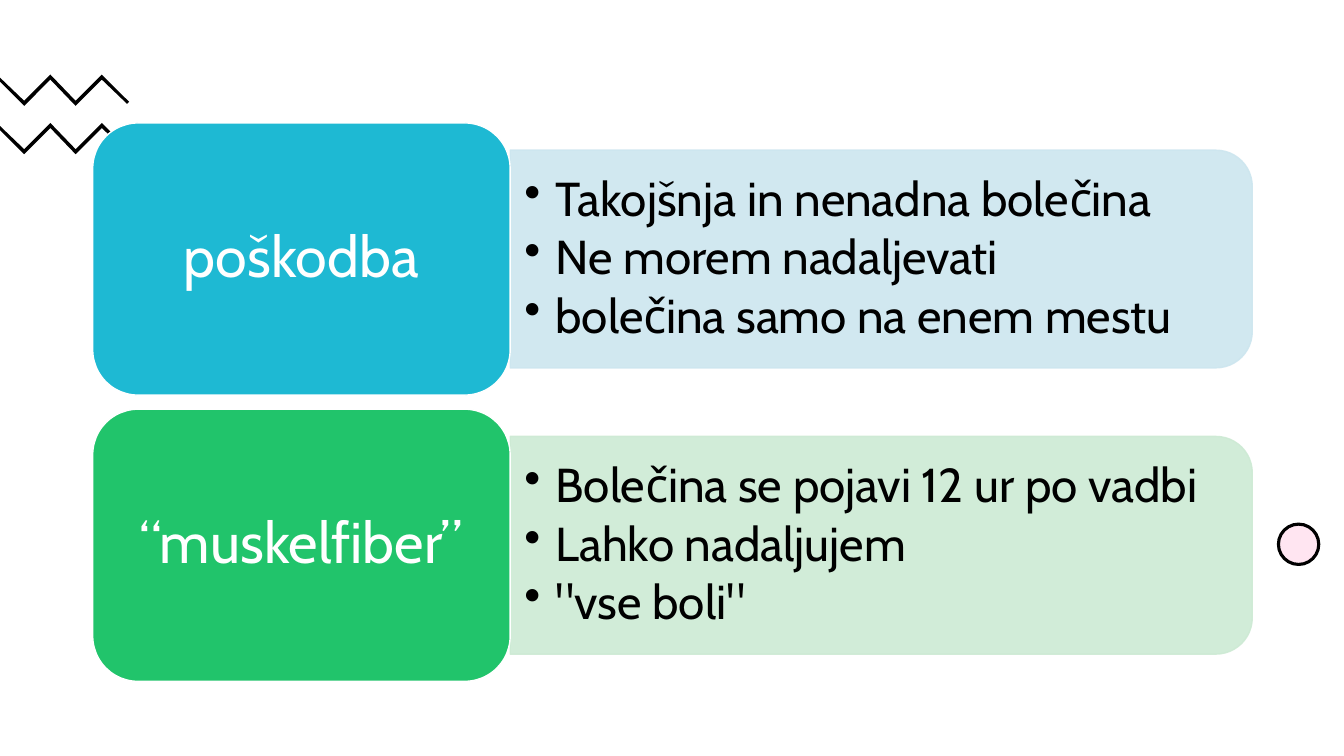
from lxml.etree import SubElement
from pptx import Presentation
from pptx.dml.color import RGBColor
from pptx.enum.shapes import MSO_SHAPE
from pptx.enum.text import MSO_ANCHOR, PP_ALIGN
from pptx.oxml.ns import qn
from pptx.util import Pt

PX = 9144  # EMU per px, 100 px to the inch
FONT = "Cabin"

BLACK = RGBColor(0x00, 0x00, 0x00)
WHITE = RGBColor(0xFF, 0xFF, 0xFF)
PINK = RGBColor(0xFF, 0x80, 0xBD)
BLUE = RGBColor(0x1E, 0xB9, 0xD3)
PALE_BLUE = RGBColor(0xCD, 0xE6, 0xEF)
GREEN = RGBColor(0x21, 0xC4, 0x6B)
PALE_GREEN = RGBColor(0xCD, 0xEA, 0xD4)

ZIGZAG = [(50, 0), (75, 26), (101, 0), (128, 27), (126, 29), (101, 5),
          (75, 31), (50, 5), (24, 31), (0, 7), (0, 3), (24, 26)]
ZIGZAG_TOPS = (74, 122)

FIRST_ROW_TOP, ROW_PITCH = 122, 284
CARD_LEFT, CARD_WIDTH, CARD_HEIGHT = 92, 414, 270
PANEL_WIDTH, PANEL_HEIGHT = 736, 216
POINTS_WIDTH, POINTS_HEIGHT = 725, 195

ROWS = [
    ("poškodba", BLUE, PALE_BLUE,
     ["Takojšnja in nenadna bolečina", "Ne morem nadaljevati",
      "bolečina samo na enem mestu"]),
    ("“muskelfiber”", GREEN, PALE_GREEN,
     ["Bolečina se pojavi 12 ur po vadbi", "Lahko nadaljujem",
      '"vse boli"']),
]


class SlideBuilder:
    def __init__(self, slide):
        self.slide = slide

    def paint(self, shape, fill, line=None, weight=1, opacity=100):
        """Set fill and line; opacity in percent applies to the fill colour."""
        shape.shadow.inherit = False
        shape.fill.solid()
        shape.fill.fore_color.rgb = fill
        if line is None:
            shape.line.fill.background()
        else:
            shape.line.color.rgb = line
            shape.line.width = Pt(weight)
        if opacity < 100:
            for colour in shape._element.spPr.iter(qn("a:srgbClr")):
                if colour.get("val") == str(fill):
                    SubElement(colour, qn("a:alpha"), val=str(opacity * 1000))

    def shape(self, kind, left, top, width, height, **paint):
        box = (value * PX for value in (left, top, width, height))
        shape = self.slide.shapes.add_shape(kind, *box)
        self.paint(shape, **paint)
        return shape

    def zigzag(self, top):
        start, *rest = [(x, top + y) for x, y in ZIGZAG]
        outline = self.slide.shapes.build_freeform(*start, scale=PX)
        outline.add_line_segments(rest, close=True)
        self.paint(outline.convert_to_shape(), BLACK)

    def panel(self, left, middle, colour):
        """Draw a panel turned so that its rounded corners face right."""
        panel = self.shape(
            MSO_SHAPE.ROUND_2_SAME_RECTANGLE,
            left + (PANEL_WIDTH - PANEL_HEIGHT) // 2, middle - PANEL_WIDTH // 2,
            PANEL_HEIGHT, PANEL_WIDTH, fill=colour, line=colour, opacity=90)
        panel.rotation = 90

    def set_text(self, frame, lines, size, colour, align, inset_x, inset_y, after=0):
        frame_format = {
            "word_wrap": True, "vertical_anchor": MSO_ANCHOR.MIDDLE,
            "margin_left": inset_x * PX, "margin_right": inset_x * PX,
            "margin_top": inset_y * PX, "margin_bottom": inset_y * PX}
        for name, value in frame_format.items():
            setattr(frame, name, value)
        frame.text = "\n".join(lines)
        paragraph_format = {"alignment": align, "line_spacing": 0.9,
                            "space_after": Pt(after)}
        for paragraph in frame.paragraphs:
            for name, value in paragraph_format.items():
                setattr(paragraph, name, value)
            font = paragraph.runs[0].font
            font.name, font.size, font.color.rgb = FONT, Pt(size), colour

    def card(self, top, label, colour):
        card = self.shape(MSO_SHAPE.ROUNDED_RECTANGLE, CARD_LEFT, top,
                          CARD_WIDTH, CARD_HEIGHT, fill=colour, line=WHITE)
        self.set_text(card.text_frame, [label], 41, WHITE, PP_ALIGN.CENTER, 17, 9)

    def bullets(self, left, middle, points):
        box = self.slide.shapes.add_textbox(
            left * PX, (middle - POINTS_HEIGHT // 2) * PX,
            POINTS_WIDTH * PX, POINTS_HEIGHT * PX)
        self.set_text(box.text_frame, points, 34, BLACK, PP_ALIGN.LEFT, 14, 7, after=5)
        for paragraph in box.text_frame.paragraphs:
            properties = paragraph._p.get_or_add_pPr()
            properties.set("marL", str(31 * PX))
            properties.set("indent", str(-31 * PX))
            SubElement(properties, qn("a:buChar"), char="•")


def main():
    deck = Presentation()
    deck.slide_width, deck.slide_height = 1333 * PX, 750 * PX
    builder = SlideBuilder(deck.slides.add_slide(deck.slide_layouts[6]))

    for top in ZIGZAG_TOPS:
        builder.zigzag(top)
    builder.shape(MSO_SHAPE.OVAL, 1268, 520, 40, 40,
                  fill=PINK, line=BLACK, weight=2.25, opacity=20)

    panel_left = CARD_LEFT + CARD_WIDTH
    for index, (label, colour, pale_colour, points) in enumerate(ROWS):
        top = FIRST_ROW_TOP + index * ROW_PITCH
        middle = top + CARD_HEIGHT // 2
        builder.panel(panel_left, middle, pale_colour)
        builder.bullets(panel_left, middle, points)
        builder.card(top, label, colour)

    deck.save("out.pptx")


if __name__ == "__main__":
    main()
